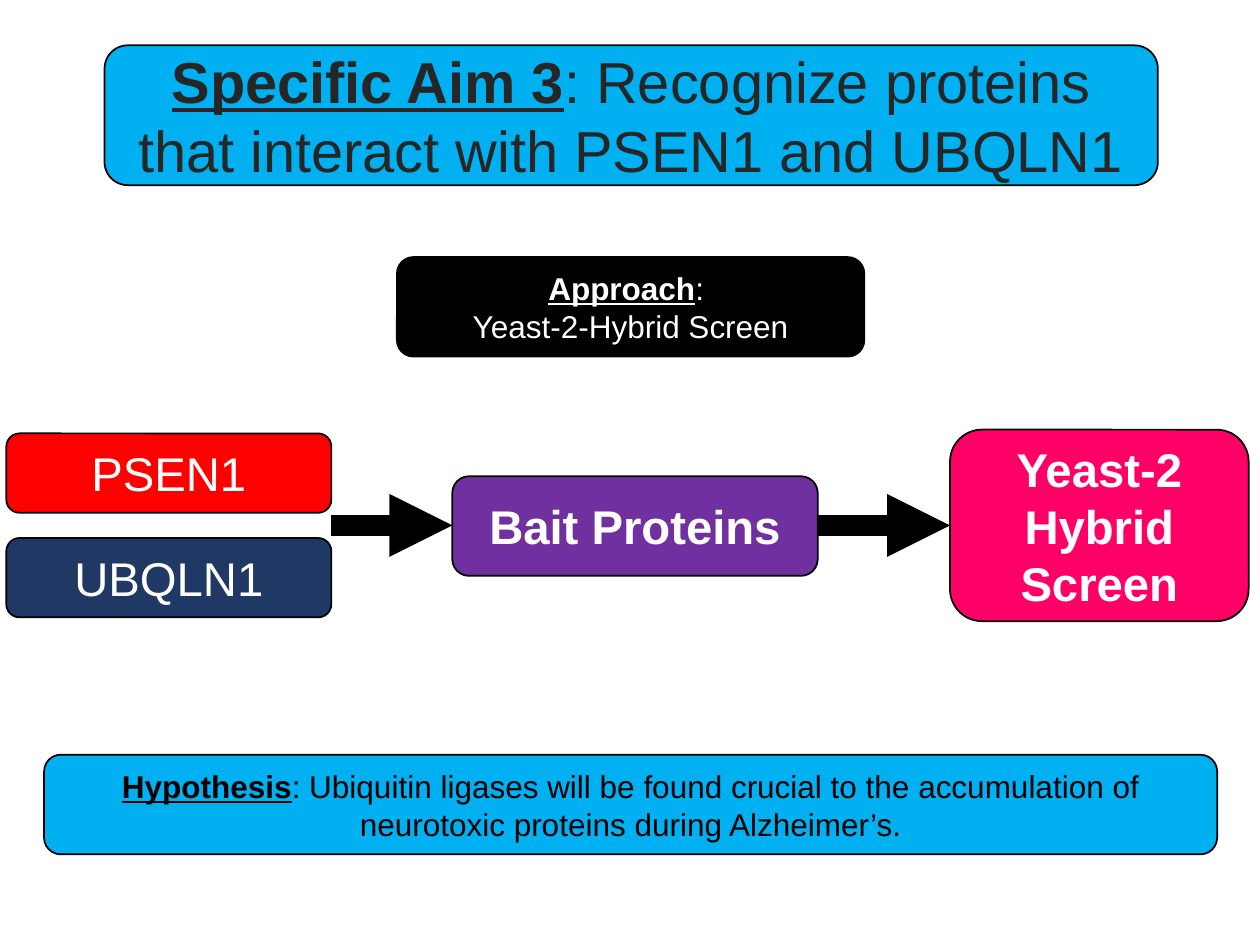
from dataclasses import dataclass

from lxml import etree
from pptx import Presentation
from pptx.dml.color import RGBColor
from pptx.enum.shapes import MSO_CONNECTOR, MSO_SHAPE
from pptx.enum.text import MSO_ANCHOR, PP_ALIGN
from pptx.oxml.ns import qn
from pptx.slide import Slide
from pptx.util import Inches, Pt

ROUNDED = MSO_SHAPE.ROUNDED_RECTANGLE
STRAIGHT = MSO_CONNECTOR.STRAIGHT
MIDDLE = MSO_ANCHOR.MIDDLE
CENTER = PP_ALIGN.CENTER

BLACK = RGBColor(0x00, 0x00, 0x00)
WHITE = RGBColor(0xFF, 0xFF, 0xFF)
CHARCOAL = RGBColor(0x26, 0x26, 0x26)
SKY = RGBColor(0x00, 0xB0, 0xF0)
RED = RGBColor(0xFF, 0x00, 0x00)
NAVY = RGBColor(0x20, 0x38, 0x64)
PURPLE = RGBColor(0x70, 0x30, 0xA0)
PINK = RGBColor(0xFF, 0x00, 0x66)

PLAIN = {"bold": False, "underline": False}
BOLD = {"bold": True, "underline": False}
HEADING = {"bold": True, "underline": True}


@dataclass(frozen=True)
class Span:
    text: str
    style: dict


@dataclass(frozen=True)
class Box:
    left: float
    top: float
    width: float
    height: float
    fill: RGBColor
    color: RGBColor
    size: int
    paragraphs: list[list[Span]]

    @property
    def right(self) -> float:
        return self.left + self.width


def draw_box(page: Slide, box: Box) -> None:
    shape = page.shapes.add_shape(
        ROUNDED, Inches(box.left), Inches(box.top), Inches(box.width), Inches(box.height)
    )
    shape.shadow.inherit = False
    shape.fill.solid()
    shape.fill.fore_color.rgb = box.fill
    shape.line.color.rgb = BLACK
    shape.line.width = Pt(1)
    frame = shape.text_frame
    frame.word_wrap = True
    frame.vertical_anchor = MIDDLE
    for index, spans in enumerate(box.paragraphs):
        paragraph = frame.add_paragraph() if index else frame.paragraphs[0]
        paragraph.alignment = CENTER
        for span in spans:
            run = paragraph.add_run()
            run.text = span.text
            run.font.color.rgb = box.color
            values = {"name": "Arial", "size": Pt(box.size), **span.style}
            for name, value in values.items():
                setattr(run.font, name, value)


def draw_arrow(page: Slide, start: float, end: float, y: float) -> None:
    arrow = page.shapes.add_connector(
        STRAIGHT, Inches(start), Inches(y), Inches(end), Inches(y)
    )
    arrow.line.color.rgb = BLACK
    arrow.line.width = Pt(12)
    etree.SubElement(arrow.line._get_or_add_ln(), qn("a:tailEnd"), type="triangle")
    etree.SubElement(arrow._element.spPr, qn("a:effectLst"))


# Statements above and below the workflow
TITLE = Box(0.83, 0.36, 8.36, 1.11, SKY, CHARCOAL, 33, [[
    Span("Specific Aim 3", HEADING),
    Span(": Recognize proteins that interact with PSEN1 and UBQLN1", PLAIN),
]])
APPROACH = Box(3.15, 2.04, 3.71, 0.79, BLACK, WHITE, 18, [
    [Span("Approach", HEADING), Span(": ", PLAIN)],
    [Span("Yeast-2-Hybrid Screen", PLAIN)],
])
HYPOTHESIS = Box(0.35, 5.99, 9.31, 0.79, SKY, BLACK, 18, [[
    Span("Hypothesis", HEADING),
    Span(": Ubiquitin ligases will be found crucial to the accumulation of "
         "neurotoxic proteins during Alzheimer’s.", PLAIN),
]])

# Workflow, from left to right
GENES = [
    Box(0.05, 3.44 + row * 0.83, 2.58, 0.63, fill, WHITE, 27, [[Span(name, PLAIN)]])
    for row, (name, fill) in enumerate([("PSEN1", RED), ("UBQLN1", NAVY)])
]
BAIT = Box(3.59, 3.78, 2.9, 0.79, PURPLE, WHITE, 27, [[Span("Bait Proteins", BOLD)]])
SCREEN = Box(7.54, 3.41, 2.37, 1.52, PINK, WHITE, 27, [
    [Span("Yeast-2", BOLD)],
    [Span("Hybrid Screen", BOLD)],
])
FLOW_Y = 4.17


def main() -> None:
    deck = Presentation()
    deck.slide_width = Inches(10)
    deck.slide_height = Inches(7.5)
    page = deck.slides.add_slide(deck.slide_layouts[6])

    # Arrows lie behind the boxes they join
    for source, target in [(GENES[0], BAIT), (BAIT, SCREEN)]:
        draw_arrow(page, source.right, target.left, FLOW_Y)
    for box in [TITLE, APPROACH, *GENES, BAIT, SCREEN, HYPOTHESIS]:
        draw_box(page, box)

    deck.save("out.pptx")


if __name__ == "__main__":
    main()
